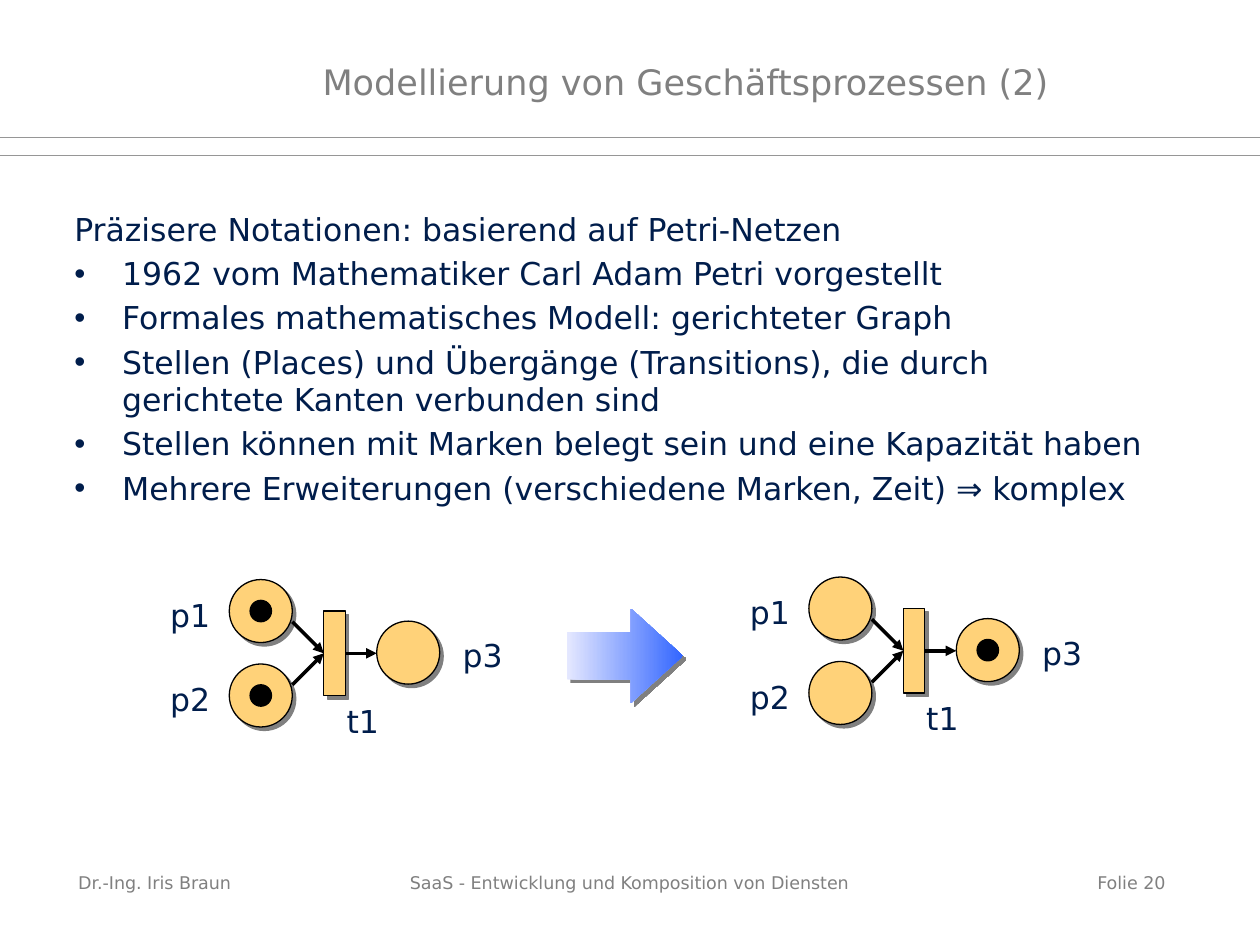
from dataclasses import dataclass

from lxml import etree
from pptx import Presentation
from pptx.dml.color import RGBColor as RGB
from pptx.enum.shapes import MSO_CONNECTOR as LINE, MSO_SHAPE as SHAPE
from pptx.enum.text import MSO_ANCHOR as ANCHOR, PP_ALIGN as ALIGN
from pptx.oxml.ns import qn
from pptx.util import Inches, Pt


@dataclass(frozen=True)
class Theme:
    font: str = "DejaVu Sans"
    title_size: int = 20
    body_size: int = 18
    footer_size: int = 10
    ink: str = "001D4B"
    grey: str = "808080"
    rule: str = "969696"
    node: str = "FFD279"
    black: str = "000000"
    arrow_from: str = "E5E8FF"
    arrow_to: str = "3366FF"


THEME = Theme()

TITLE = "Modellierung von Geschäftsprozessen (2)"
LEAD = "Präzisere Notationen: basierend auf Petri-Netzen"
BULLETS = [
    "1962 vom Mathematiker Carl Adam Petri vorgestellt",
    "Formales mathematisches Modell: gerichteter Graph",
    "Stellen (Places) und Übergänge (Transitions), die durch gerichtete Kanten verbunden sind",
    "Stellen können mit Marken belegt sein und eine Kapazität haben",
    "Mehrere Erweiterungen (verschiedene Marken, Zeit) ⇒ komplex",
]
# text, left, width, alignment
FOOTERS = [
    ("Dr.-Ing. Iris Braun", 0.62, 2.25, ALIGN.LEFT),
    ("SaaS - Entwicklung und Komposition von Diensten", 3.08, 3.83, ALIGN.CENTER),
    ("Folie 20", 7.17, 2.08, ALIGN.RIGHT),
]
RULES = [1.09, 1.23]

# Petri net geometry, relative to the net's upper left corner
PLACES = {"p1": (0.57, 0), "p2": (0.57, 0.67), "p3": (1.74, 0.33)}
LABELS = {"p1": (0, 0.08, 0.52), "p2": (0, 0.75, 0.52),
          "p3": (2.32, 0.4, 0.52), "t1": (1.4, 0.92, 0.46)}
TRANSITION = (1.32, 0.25, 0.17, 0.67)
PLACE_SIZE, TOKEN_SIZE = 0.5, 0.17
# left, top, marked places: before and after firing
NETS = [(1.25, 4.6, {"p1", "p2"}), (5.85, 4.58, {"p3"})]

prs = Presentation()
prs.slide_width, prs.slide_height = Inches(10), Inches(7.5)
slide = prs.slides.add_slide(prs.slide_layouts[6])


def rgb(colour):
    return RGB.from_string(colour)


def style(paragraph, size, colour, align=ALIGN.LEFT):
    paragraph.alignment = align
    paragraph.font.name = THEME.font
    paragraph.font.size = Pt(size)
    paragraph.font.color.rgb = rgb(colour)


def add_frame(left, top, width, height, insets, wrap=True):
    """Add a text box; insets are left, top, right, bottom."""
    frame = slide.shapes.add_textbox(*map(Inches, (left, top, width, height))).text_frame
    frame.word_wrap = wrap
    (frame.margin_left, frame.margin_top,
     frame.margin_right, frame.margin_bottom) = map(Inches, insets)
    return frame


def add_bullet(paragraph):
    props = paragraph._p.get_or_add_pPr()
    props.set("marL", str(Inches(0.38)))
    props.set("indent", str(-Inches(0.38)))
    etree.SubElement(props, qn("a:buFont"), typeface="Arial")
    etree.SubElement(props, qn("a:buChar"), char="•")


def add_shadow(shape):
    """Cast a hard grey shadow to the lower right."""
    shape.shadow.inherit = False
    effects = shape._element.spPr.find(qn("a:effectLst"))
    shadow = etree.SubElement(effects, qn("a:outerShdw"), dist=str(Pt(2.8)),
                              dir="2700000", algn="ctr", rotWithShape="0")
    etree.SubElement(shadow, qn("a:srgbClr"), val=THEME.grey)


def add_solid(kind, left, top, width, height, fill):
    solid = slide.shapes.add_shape(kind, *map(Inches, (left, top, width, height)))
    solid.shadow.inherit = False
    solid.fill.solid()
    solid.fill.fore_color.rgb = rgb(fill)
    solid.line.color.rgb = rgb(THEME.black)
    solid.line.width = Pt(0.75)
    return solid


def add_line(x1, y1, x2, y2, colour, width, arrow=False):
    line = slide.shapes.add_connector(LINE.STRAIGHT, *map(Inches, (x1, y1, x2, y2)))
    line.line.color.rgb = rgb(colour)
    line.line.width = Pt(width)
    if arrow:
        etree.SubElement(line.line._get_or_add_ln(), qn("a:tailEnd"), type="triangle")
    etree.SubElement(line._element.spPr, qn("a:effectLst"))
    return line


def add_net(left, top, marked):
    t_left, t_top, t_width, t_height = TRANSITION
    bar_x, bar_y = left + t_left, top + t_top
    middle = bar_y + t_height / 2
    bar = add_solid(SHAPE.RECTANGLE, bar_x, bar_y, t_width, t_height, THEME.node)
    add_shadow(bar)

    inset = (PLACE_SIZE - TOKEN_SIZE) / 2
    for name, (dx, dy) in PLACES.items():
        x, y = left + dx, top + dy
        add_shadow(add_solid(SHAPE.OVAL, x, y, PLACE_SIZE, PLACE_SIZE, THEME.node))
        if name in marked:
            add_solid(SHAPE.OVAL, x + inset, y + inset, TOKEN_SIZE, TOKEN_SIZE, THEME.black)

    for start_y in (middle - 0.25, middle + 0.25):
        edge = add_line(bar_x - 0.25, start_y, bar_x, middle, THEME.black, 2, arrow=True)
        edge.end_connect(bar, 1)
    edge = add_line(bar_x + t_width, middle, left + PLACES["p3"][0], middle,
                    THEME.black, 2, arrow=True)
    edge.begin_connect(bar, 3)

    for name, (dx, dy, width) in LABELS.items():
        label = add_frame(left + dx, top + dy, width, 0.4, (0.1, 0.05, 0.1, 0.05), wrap=False)
        label.text = name
        style(label.paragraphs[0], THEME.body_size, THEME.ink, ALIGN.CENTER)


def add_firing_arrow():
    arrow = slide.shapes.add_shape(SHAPE.RIGHT_ARROW, *map(Inches, (4.5, 4.83, 0.92, 0.75)))
    arrow.adjustments[0], arrow.adjustments[1] = 0.5, 0.55
    arrow.fill.gradient()
    arrow.fill.gradient_angle = 0
    for stop, colour in zip(arrow.fill.gradient_stops, (THEME.arrow_from, THEME.arrow_to)):
        stop.color.rgb = rgb(colour)
    arrow.line.fill.background()
    add_shadow(arrow)


for y in RULES:
    add_line(0, y, 10, y, THEME.rule, 0.5)

title = add_frame(2.56, 0.44, 6.71, 0.42, (0, 0.05, 0.1, 0.05))
title.vertical_anchor = ANCHOR.MIDDLE
title.text = TITLE
style(title.paragraphs[0], THEME.title_size, THEME.grey)

body = add_frame(0.59, 1.62, 8.66, 5.04, (0, 0.05, 0.1, 0.05))
body.text = LEAD
style(body.paragraphs[0], THEME.body_size, THEME.ink)
for bullet in BULLETS:
    point = body.add_paragraph()
    point.text = bullet
    add_bullet(point)
    point.space_before = Pt(3.6)
    style(point, THEME.body_size, THEME.ink)

for net in NETS:
    add_net(*net)
add_firing_arrow()

for words, left, width, align in FOOTERS:
    footer = add_frame(left, 6.92, width, 0.29, (0, 0, 0, 0))
    footer.text = words
    style(footer.paragraphs[0], THEME.footer_size, THEME.grey, align)

prs.save("out.pptx")
